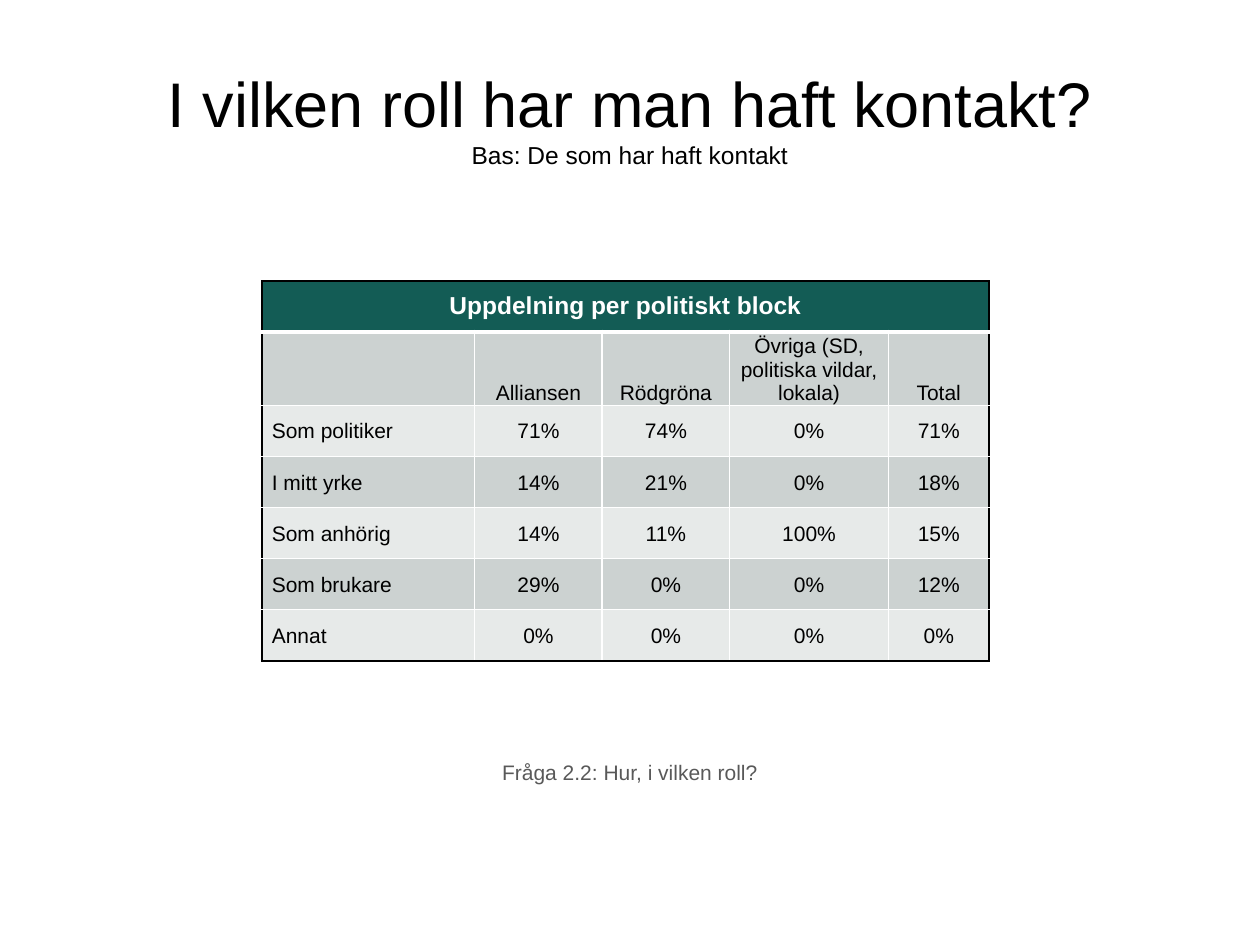
from lxml.etree import SubElement
from pptx import Presentation
from pptx.dml.color import RGBColor
from pptx.enum.text import MSO_ANCHOR as Anchor, MSO_AUTO_SIZE as AutoSize, PP_ALIGN as Align
from pptx.oxml.ns import qn
from pptx.util import Cm, Pt

FONT = "Arial"
COLORS = {
    "text": "000000",
    "note": "595959",
    "white": "FFFFFF",
    "banner": "135C55",
    "dark_band": "CCD2D1",
    "light_band": "E7EAE9",
}
BANNER = "Uppdelning per politiskt block"
ROWS = [
    ["", "Alliansen", "Rödgröna", "Övriga (SD, politiska vildar, lokala)", "Total"],
    ["Som politiker", "71%", "74%", "0%", "71%"],
    ["I mitt yrke", "14%", "21%", "0%", "18%"],
    ["Som anhörig", "14%", "11%", "100%", "15%"],
    ["Som brukare", "29%", "0%", "0%", "12%"],
    ["Annat", "0%", "0%", "0%", "0%"],
]
COLUMN_WIDTHS = [4.29, 2.57, 2.57, 3.2, 2.03]
ROW_HEIGHTS = [1.03, 1.48] + [1.03] * 5


def style_span(span, size, color="text", bold=False):
    span.font.name = FONT
    span.font.size = Pt(size)
    span.font.bold = bold
    span.font.color.rgb = RGBColor.from_string(COLORS[color])


def add_centred_text(page, box, text, sizes, color="text", anchor=Anchor.TOP):
    """Add one centred paragraph; sizes holds one font size per line."""
    shape = page.shapes.add_textbox(*(Cm(length) for length in box))
    frame = shape.text_frame
    frame.word_wrap = True
    frame.vertical_anchor = anchor
    frame.text = text
    para = frame.paragraphs[0]
    para.alignment = Align.CENTER
    for span, size in zip(para.runs, sizes):
        style_span(span, size, color)
    return shape


def add_title(page, box):
    add_centred_text(page, box, "I vilken roll har man haft kontakt?\vBas: De som har haft kontakt",
                     [36, 14], anchor=Anchor.MIDDLE)


def add_question(page, box):
    shape = add_centred_text(page, box, "Fråga 2.2: Hur, i vilken roll?", [12], "note")
    shape.text_frame.auto_size = AutoSize.SHAPE_TO_FIT_TEXT


def set_borders(cell, **sides):
    """Draw the sides L, R, T and B, each given as (color, points)."""
    properties = cell._tc.get_or_add_tcPr()
    for side in "LRTB":
        color, width = sides[side]
        line = SubElement(properties, qn(f"a:ln{side}"), w=str(Pt(width)))
        fill = SubElement(line, qn("a:solidFill"))
        SubElement(fill, qn("a:srgbClr"), val=COLORS[color])


def fill_cell(cell, color):
    cell.fill.solid()
    cell.fill.fore_color.rgb = RGBColor.from_string(COLORS[color])


def write_cell(cell, text, size, align=Align.CENTER, **style):
    cell.text = text
    para = cell.text_frame.paragraphs[0]
    para.alignment = align
    for span in para.runs:
        style_span(span, size, **style)


def add_role_table(page, left, top):
    row_count, column_count = len(ROW_HEIGHTS), len(COLUMN_WIDTHS)
    table = page.shapes.add_table(row_count, column_count, Cm(left), Cm(top),
                                  Cm(sum(COLUMN_WIDTHS)), Cm(sum(ROW_HEIGHTS))).table
    for column, width in zip(table.columns, COLUMN_WIDTHS):
        column.width = Cm(width)
    for row, height in zip(table.rows, ROW_HEIGHTS):
        row.height = Cm(height)

    outer, inner = ("text", 1), ("white", 1)
    for column in range(column_count):
        cell = table.cell(0, column)
        set_borders(cell, L=outer, R=outer, T=outer, B=("white", 3))
        fill_cell(cell, "banner")
    banner = table.cell(0, 0)
    banner.merge(table.cell(0, column_count - 1))
    banner.vertical_anchor = Anchor.MIDDLE
    write_cell(banner, BANNER, 14, color="white", bold=True)

    for row, values in enumerate(ROWS, start=1):
        for column, value in enumerate(values):
            cell = table.cell(row, column)
            is_label = column == 0
            set_borders(cell, T=inner,
                        L=outer if is_label else inner,
                        R=outer if column == column_count - 1 else inner,
                        B=outer if row == row_count - 1 else inner)
            fill_cell(cell, "dark_band" if row % 2 else "light_band")
            cell.margin_left = Cm(0.2 if is_label else 0.03)
            cell.margin_top = cell.margin_right = Cm(0.03)
            cell.margin_bottom = 0
            cell.vertical_anchor = Anchor.BOTTOM if row == 1 else Anchor.MIDDLE
            write_cell(cell, value, 12, Align.LEFT if is_label else Align.CENTER)


def main():
    deck = Presentation()
    deck.slide_width, deck.slide_height = Cm(25.4), Cm(19.05)
    page = deck.slides.add_slide(deck.slide_layouts[6])
    add_role_table(page, 5.28, 5.66)
    add_title(page, (0, 0.76, 25.4, 3.18))
    add_question(page, (0, 15.19, 25.4, 0.76))
    deck.save("out.pptx")


if __name__ == "__main__":
    main()
